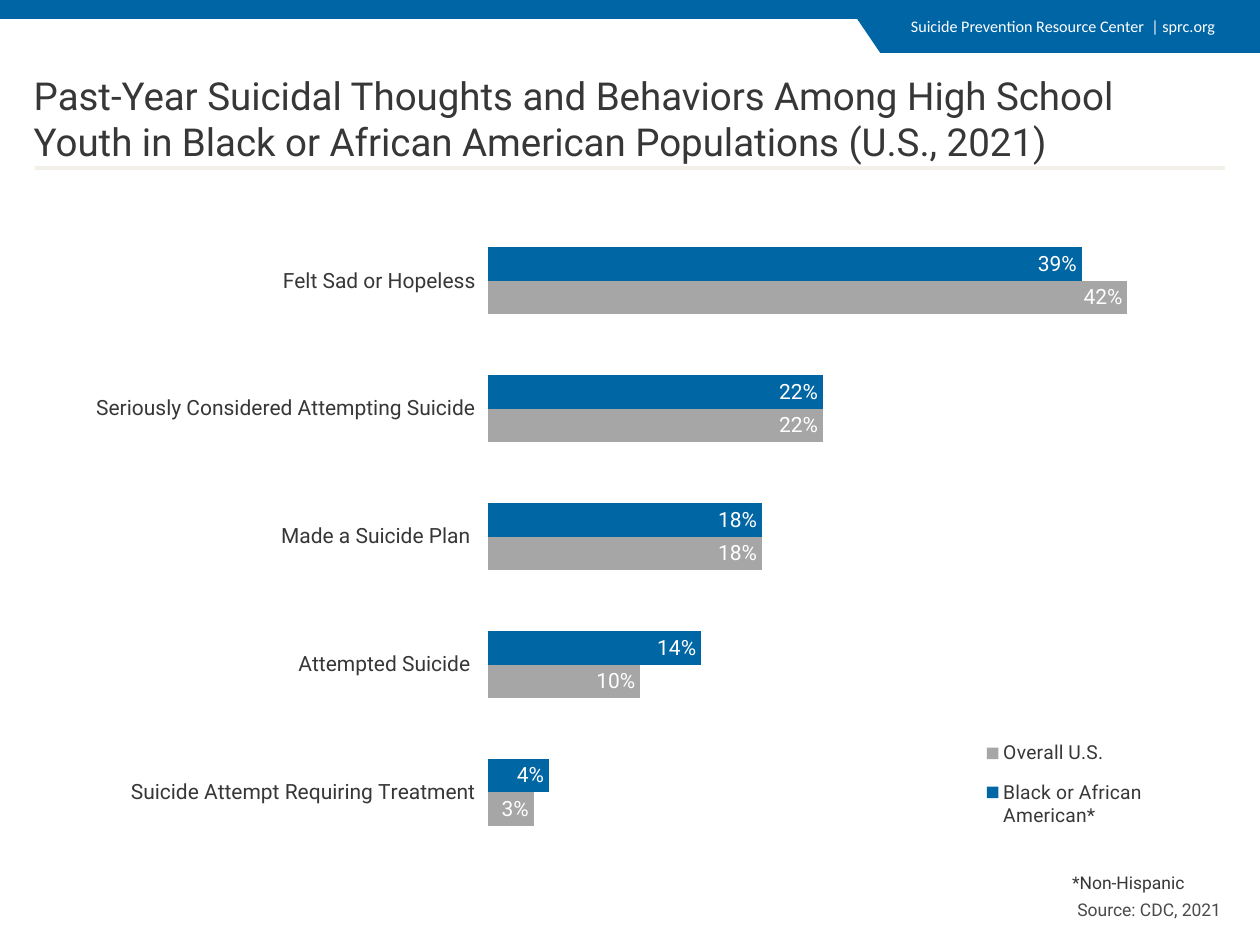
from lxml import etree
from pptx import Presentation
from pptx.chart.data import CategoryChartData as ChartData
from pptx.dml.color import RGBColor as Color
from pptx.enum.chart import XL_CHART_TYPE as Kind, XL_LABEL_POSITION as Spot
from pptx.enum.chart import XL_LEGEND_POSITION as Side, XL_TICK_LABEL_POSITION as Label
from pptx.enum.chart import XL_TICK_MARK as Tick
from pptx.enum.shapes import MSO_CONNECTOR as Wire, MSO_SHAPE as Shape
from pptx.enum.text import PP_ALIGN as Align
from pptx.oxml.ns import qn
from pptx.util import Pt

BLUE = Color(0x00, 0x65, 0xA4)
BAR = Color(0x00, 0x66, 0xA4)
GRAY = Color(0xA6, 0xA6, 0xA6)
DARK = Color(0x37, 0x37, 0x37)
SOFT = Color(0x4B, 0x4B, 0x4B)
SAND = Color(0xF3, 0xF0, 0xEA)
WHITE = Color(0xFF, 0xFF, 0xFF)

CATS = [
    "Felt Sad or Hopeless",
    "Seriously Considered Attempting Suicide",
    "Made a Suicide Plan ",
    "Attempted Suicide ",
    "Suicide Attempt Requiring Treatment",
]
SERIES = [
    ("Black or African American*", (0.39, 0.22, 0.18, 0.14, 0.04), BAR),
    ("Overall U.S.", (0.42, 0.22, 0.18, 0.10, 0.03), GRAY),
]


def style(font, size, color, name="Roboto"):
    font.size = Pt(size)
    font.name = name
    font.color.rgb = color


def add_text(slide, box, text, size, color, name="Roboto", align=Align.LEFT):
    frame = slide.shapes.add_textbox(*map(Pt, box)).text_frame
    frame.word_wrap = True
    frame.text = text
    line = frame.paragraphs[0]
    line.alignment = align
    style(line.runs[0].font, size, color, name)


def paint(shape, color):
    shape.shadow.inherit = False
    shape.fill.solid()
    shape.fill.fore_color.rgb = color
    shape.line.fill.background()


def add_header(slide, box):
    left, top, width, height = box
    right = left + width
    paint(slide.shapes.add_shape(
        Shape.RECTANGLE, Pt(left), Pt(top), Pt(width), Pt(10.8)), BLUE)
    tab = top + 7.2
    build = slide.shapes.build_freeform(Pt(right), Pt(tab))
    build.add_line_segments([
        (Pt(right), Pt(top + height)),
        (Pt(right - 217), Pt(top + height)),
        (Pt(right - 232.6), Pt(tab)),
    ])
    paint(build.convert_to_shape(), BLUE)
    add_text(slide, (right - 206.6, top + 5.8, 212, 29.5),
             "Suicide Prevention Resource Center  | sprc.org",
             9.2, WHITE, "Calibri")


def add_title(slide, box):
    left, top, width, height = box
    add_text(slide, box,
             "Past-Year Suicidal Thoughts and Behaviors Among High School "
             "Youth in Black or African American Populations (U.S., 2021)",
             22, DARK)
    rule = top + 58.4
    line = slide.shapes.add_connector(
        Wire.STRAIGHT, Pt(left + 7.8), Pt(rule), Pt(left + width + 4.5), Pt(rule))
    line.line.color.rgb = SAND
    line.line.width = Pt(2.25)
    etree.SubElement(line._element.spPr, qn("a:effectLst"))


def set_layout(part, index, area, inner=False):
    for old in part.findall(qn("c:layout")):
        part.remove(old)
    layout = etree.Element(qn("c:layout"))
    manual = etree.SubElement(layout, qn("c:manualLayout"))
    pairs = [("layoutTarget", "inner")] if inner else []
    pairs += [("xMode", "edge"), ("yMode", "edge")]
    pairs += zip("xywh", area)
    for tag, val in pairs:
        etree.SubElement(manual, qn("c:" + tag)).set("val", str(val))
    part.insert(index, layout)


def add_bars(slide, box):
    data = ChartData(number_format="0%")
    data.categories = CATS
    for name, vals, _ in SERIES:
        data.add_series(name, vals)
    chart = slide.shapes.add_chart(
        Kind.BAR_CLUSTERED, *map(Pt, box), data).chart
    chart.has_title = False
    style(chart.font, 10, DARK)

    cat = chart.category_axis
    cat.reverse_order = True
    cat.major_tick_mark = cat.minor_tick_mark = Tick.NONE
    cat.tick_label_position = Label.LOW
    cat.format.line.fill.background()
    style(cat.tick_labels.font, 12, DARK)

    axis = chart.value_axis
    axis.minimum_scale = 0
    axis.maximum_scale = 0.45
    axis.has_major_gridlines = False
    axis.visible = False

    plot = chart.plots[0]
    plot.vary_by_categories = False
    plot.gap_width = 182
    plot.overlap = 0
    for bars, (_, _, color) in zip(plot.series, SERIES):
        bars.format.fill.solid()
        bars.format.fill.fore_color.rgb = color
        labels = bars.data_labels
        labels.show_value = True
        labels.position = Spot.INSIDE_END
        labels.number_format = "0%"
        labels.number_format_is_linked = False
        style(labels.font, 12, WHITE)

    chart.has_legend = True
    legend = chart.legend
    legend.position = Side.BOTTOM
    legend.include_in_layout = False
    style(legend.font, 11, DARK)
    set_layout(legend._element, 1, (0.8, 0.79, 0.2, 0.18))
    area = chart._chartSpace.chart.plotArea
    set_layout(area, 0, (0.37, 0.01, 0.63, 0.98), True)


def add_notes(slide, box):
    left, top, width, height = box
    add_text(slide, (left, top + 15.8, width, 19.4), "Source: CDC, 2021",
             10, SOFT, align=Align.RIGHT)
    add_text(slide, (left + 54.7, top, 84.2, 19.4), "*Non-Hispanic",
             10, DARK, align=Align.RIGHT)


def main():
    deck = Presentation()
    deck.slide_width, deck.slide_height = Pt(720), Pt(540)
    slide = deck.slides.add_slide(deck.slide_layouts[6])
    add_header(slide, (0, 0, 720, 30.2))
    add_title(slide, (12.2, 37.4, 683.3, 74.2))
    add_notes(slide, (545, 494.6, 159.8, 35.2))
    add_bars(slide, (49, 120.2, 621.4, 373))
    deck.save("out.pptx")


if __name__ == "__main__":
    main()
